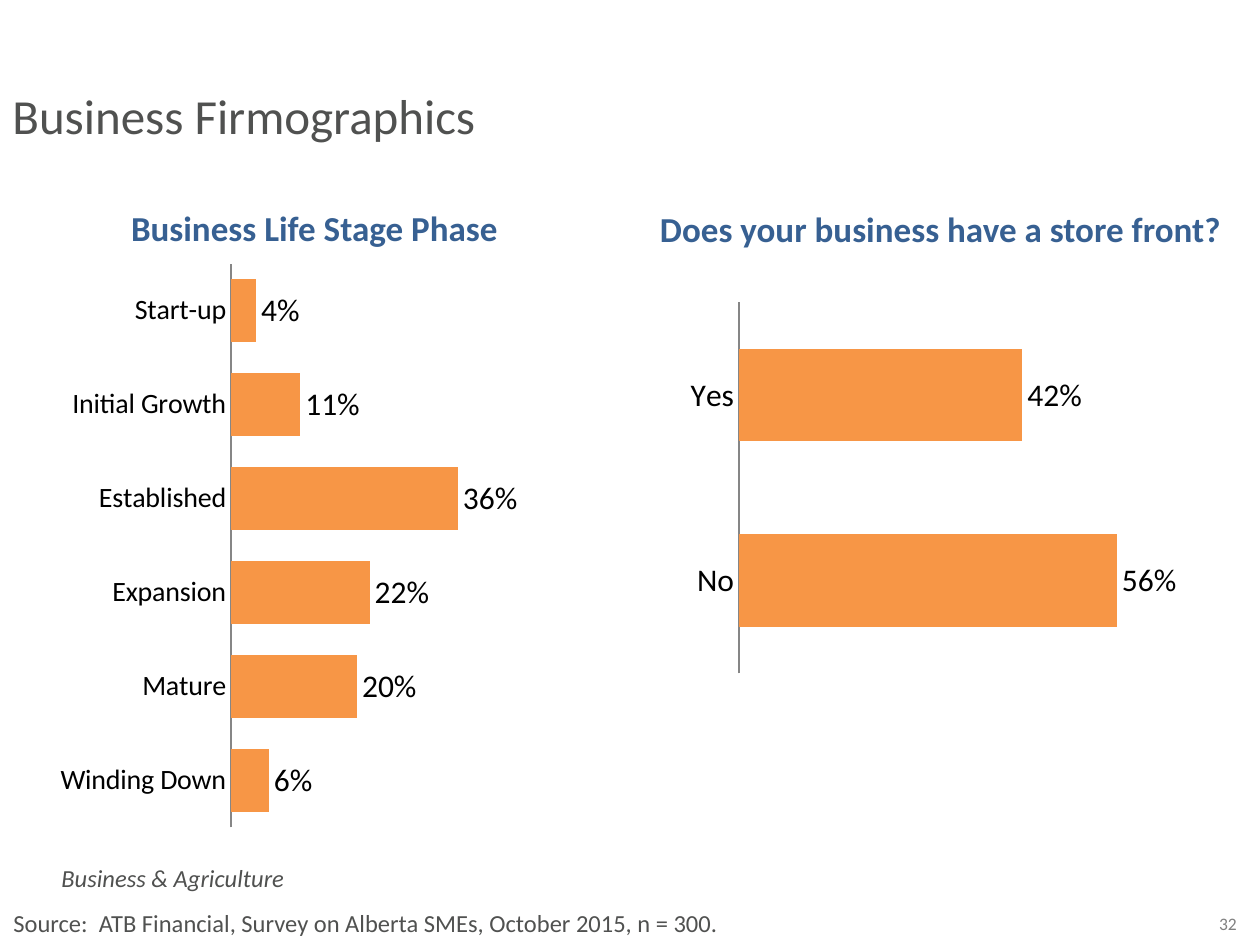
from dataclasses import dataclass

from lxml.etree import SubElement
from pptx import Presentation
from pptx.chart.data import CategoryChartData
from pptx.dml.color import RGBColor
from pptx.enum.chart import XL_CHART_TYPE as ChartType
from pptx.enum.chart import XL_LABEL_POSITION as LabelPos
from pptx.enum.chart import XL_TICK_LABEL_POSITION as TickLabelPos
from pptx.enum.chart import XL_TICK_MARK as TickMark
from pptx.enum.text import PP_ALIGN as Align
from pptx.oxml.ns import qn
from pptx.util import Emu, Pt


@dataclass(frozen=True)
class Theme:
    font: str = "Calibri"
    text: str = "505150"
    heading: str = "376092"
    number: str = "808080"
    chart_text: str = "000000"
    bar: str = "F79646"
    axis: str = "868686"
    title_size: int = 28
    heading_size: int = 20
    chart_size: int = 18
    stage_size: int = 16
    note_size: int = 14
    number_size: int = 10


THEME = Theme()
PX_PER_INCH = 126


def px(n):
    return Emu(round(n * 914400 / PX_PER_INCH))


def set_attrs(obj, values):
    for name, value in values.items():
        setattr(obj, name, value)


def set_font(font, size, color, **extra):
    set_attrs(font, {"name": THEME.font, "size": Pt(size), **extra})
    font.color.rgb = RGBColor.from_string(color)


def add_text(slide, box, text, size, color, align=Align.LEFT, **extra):
    tf = slide.shapes.add_textbox(*map(px, box)).text_frame
    tf.word_wrap = True
    p = tf.paragraphs[0]
    p.alignment = align
    r = p.add_run()
    r.text = text
    set_font(r.font, size, color, **extra)


def set_plot_layout(chart, frame):
    """Fix the inner plot area as fractions of the chart."""
    plot_area = chart._chartSpace.chart.plotArea
    layout = plot_area.find(qn("c:layout"))
    if layout is None:
        layout = plot_area.makeelement(qn("c:layout"))
        plot_area.insert(0, layout)
    manual = SubElement(layout, qn("c:manualLayout"))
    settings = {"layoutTarget": "inner", "xMode": "edge", "yMode": "edge",
                **dict(zip("xywh", frame))}
    for tag, value in settings.items():
        SubElement(manual, qn(f"c:{tag}")).set("val", str(value))


def add_bar_chart(slide, box, shares, top, gap, frame, label_size):
    data = CategoryChartData(number_format="0%")
    data.categories = list(shares)
    data.add_series("Series 1", list(shares.values()))
    chart = slide.shapes.add_chart(
        ChartType.BAR_CLUSTERED, *map(px, box), data).chart
    set_attrs(chart, {"has_legend": False, "has_title": False})
    set_font(chart.font, THEME.chart_size, THEME.chart_text)
    set_plot_layout(chart, frame)

    # Axes
    cat = chart.category_axis
    set_attrs(cat, {"reverse_order": True, "has_major_gridlines": False,
                    "major_tick_mark": TickMark.NONE,
                    "minor_tick_mark": TickMark.NONE,
                    "tick_label_position": TickLabelPos.NEXT_TO_AXIS})
    set_font(cat.tick_labels.font, label_size, THEME.chart_text)
    line = cat.format.line
    line.width = Pt(0.75)
    line.color.rgb = RGBColor.from_string(THEME.axis)
    set_attrs(chart.value_axis, {"visible": False, "minimum_scale": 0,
                                 "maximum_scale": top,
                                 "has_major_gridlines": False})

    # Bars and their values
    plot = chart.plots[0]
    set_attrs(plot, {"gap_width": gap, "vary_by_categories": False,
                     "has_data_labels": True})
    fill = plot.series[0].format.fill
    fill.solid()
    fill.fore_color.rgb = RGBColor.from_string(THEME.bar)
    labels = plot.data_labels
    set_attrs(labels, {"show_value": True, "number_format": "0%",
                       "number_format_is_linked": False,
                       "position": LabelPos.OUTSIDE_END})
    set_font(labels.font, THEME.chart_size, THEME.chart_text)


def main():
    prs = Presentation()
    set_attrs(prs, {"slide_width": px(1260), "slide_height": px(945)})
    slide = prs.slides.add_slide(prs.slide_layouts[6])

    # Title and chart headings
    add_text(slide, (0, 79, 736, 72), "Business Firmographics",
             THEME.title_size, THEME.text)
    headings = {"Business Life Stage Phase": (94, 200, 441, 54),
                "Does your business have a store front?": (556, 201, 769, 55)}
    for text, box in headings.items():
        add_text(slide, box, text, THEME.heading_size, THEME.heading,
                 Align.CENTER, bold=True)

    # Charts
    stages = {"Start-up": 0.04, "Initial Growth": 0.11, "Established": 0.36,
              "Expansion": 0.22, "Mature": 0.20, "Winding Down": 0.06}
    add_bar_chart(slide, (-91, 263, 732, 588), stages, top=0.65, gap=50,
                  frame=(0.44, 0, 0.56, 0.96), label_size=THEME.stage_size)
    add_bar_chart(slide, (433, 287, 827, 387), {"Yes": 0.42, "No": 0.56},
                  top=0.6, gap=100, frame=(0.37, 0.04, 0.49, 0.96),
                  label_size=THEME.chart_size)

    # Footer
    add_text(slide, (49, 857, 354, 43), "Business & Agriculture",
             THEME.note_size, THEME.text, italic=True)
    add_text(slide, (1, 902, 989, 43),
             "Source:  ATB Financial, Survey on Alberta SMEs, "
             "October 2015, n = 300.", THEME.note_size, THEME.text)
    add_text(slide, (1197, 907, 62, 34), "32", THEME.number_size,
             THEME.number, Align.CENTER)

    prs.save("out.pptx")


if __name__ == "__main__":
    main()
